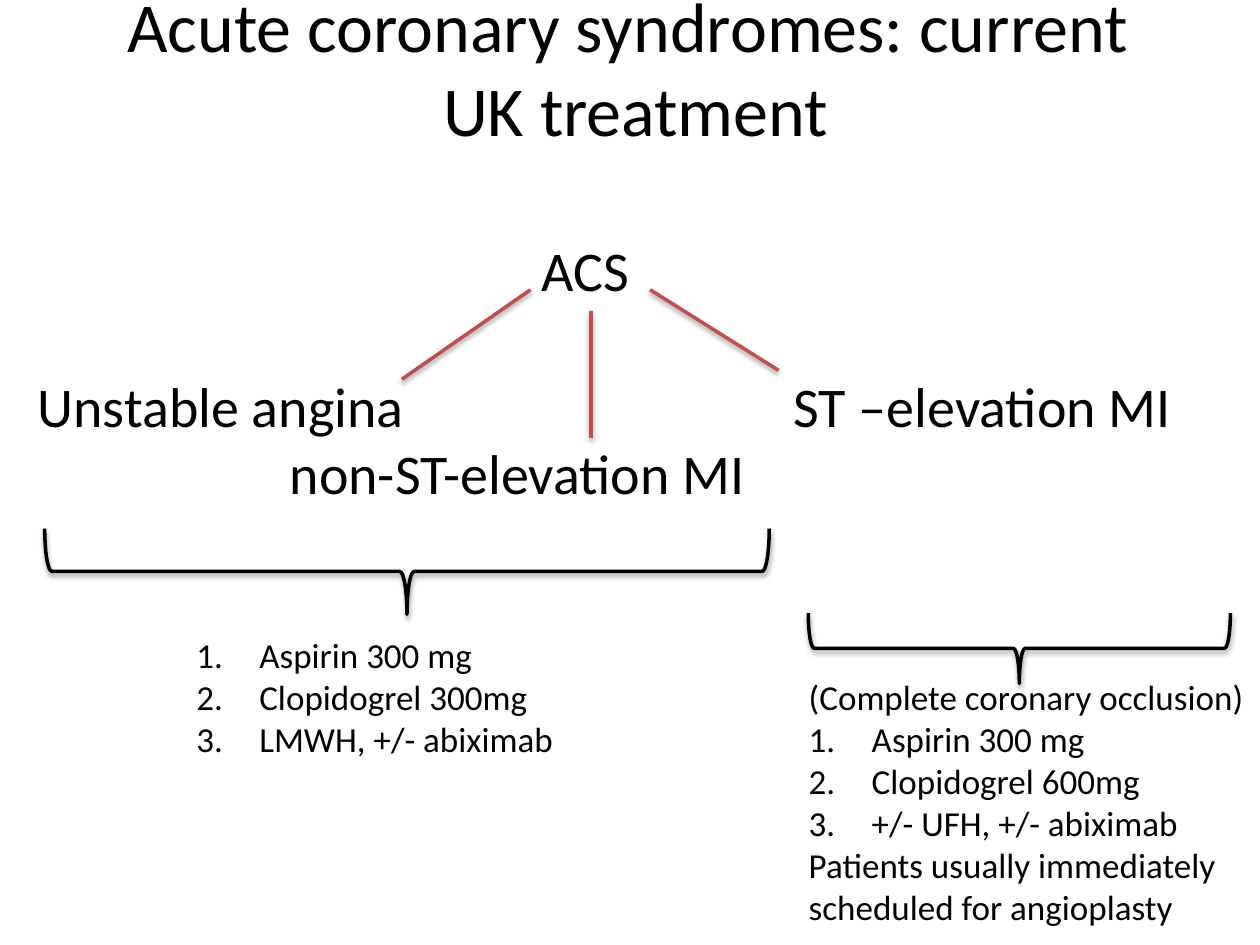
"""Build a slide on the current UK treatment of acute coronary syndromes."""
from lxml.etree import SubElement
from pptx import Presentation
from pptx.dml.color import RGBColor
from pptx.enum.shapes import MSO_CONNECTOR, MSO_SHAPE
from pptx.enum.text import PP_ALIGN
from pptx.oxml.ns import qn
from pptx.util import Inches, Pt

BLACK = RGBColor(0x00, 0x00, 0x00)
RED = RGBColor(0xC0, 0x50, 0x4D)


def write(frame, text, size=20, align=PP_ALIGN.LEFT, before=0, tab=None, hang=0, numbered=False):
    first = not frame.paragraphs[0].runs
    paragraph = frame.paragraphs[0] if first else frame.add_paragraph()
    props = paragraph._p.get_or_add_pPr()
    if hang:
        props.set("marL", str(Inches(hang)))
        props.set("indent", str(-Inches(hang)))
    if numbered:
        SubElement(props, qn("a:buFont"), typeface="+mj-lt")
        SubElement(props, qn("a:buAutoNum"), type="arabicPeriod")
    if tab:
        stops = SubElement(props, qn("a:tabLst"))
        SubElement(stops, qn("a:tab"), pos=str(Inches(tab)), algn="l")
    paragraph.alignment = align
    if before:
        paragraph.space_before = Pt(before)
    run = paragraph.add_run()
    run.text = text
    run.font.name = "Calibri"
    run.font.size = Pt(size)
    run.font.color.rgb = BLACK


class SlideBuilder:
    def __init__(self, slide, line_width=2):
        self.slide = slide
        self.line_width = Pt(line_width)

    def text_box(self, left, top, width, height):
        box = self.slide.shapes.add_textbox(*map(Inches, (left, top, width, height)))
        box.text_frame.word_wrap = True
        return box.text_frame

    def outline(self, shape, color):
        shape.line.color.rgb = color
        shape.line.width = self.line_width
        effects = SubElement(shape._element.spPr, qn("a:effectLst"))
        shadow = SubElement(effects, qn("a:outerShdw"), blurRad=str(Pt(3.1)),
                            dist=str(Pt(1.6)), dir="5400000", rotWithShape="0")
        tint = SubElement(shadow, qn("a:srgbClr"), val=str(BLACK))
        SubElement(tint, qn("a:alpha"), val="38000")

    def brace(self, left, top, width, height):
        brace = self.slide.shapes.add_shape(
            MSO_SHAPE.LEFT_BRACE, *map(Inches, (left, top, width, height)))
        brace.rotation = 270
        brace.fill.background()
        self.outline(brace, BLACK)

    def branch(self, start, end):
        branch = self.slide.shapes.add_connector(
            MSO_CONNECTOR.STRAIGHT, *map(Inches, (*start, *end)))
        self.outline(branch, RED)

    def numbered_list(self, frame, items):
        for item in items:
            write(frame, item, hang=0.5, numbered=True)


def main():
    deck = Presentation()
    deck.slide_width, deck.slide_height = Inches(10), Inches(7.5)
    builder = SlideBuilder(deck.slides.add_slide(deck.slide_layouts[6]))

    overview = builder.text_box(0.2, -0.19, 9.69, 5.35)
    write(overview, "Acute coronary syndromes: current ", size=40, align=PP_ALIGN.CENTER)
    write(overview, "UK treatment", size=40, align=PP_ALIGN.CENTER)
    write(overview, "\tACS", size=32, before=49, tab=4)
    write(overview, "Unstable angina\tST –elevation MI", size=32, before=39, tab=6)
    write(overview, "\tnon-ST-elevation MI", size=32, tab=2)

    builder.brace(2.89, 1.66, 0.68, 5.75)
    builder.brace(7.81, 3.47, 0.56, 3.35)

    for start, end in (((4.21, 2.3), (3.19, 3.01)),
                       ((5.16, 2.3), (6.18, 2.94)),
                       ((4.69, 2.47), (4.69, 3.48))):
        builder.branch(start, end)

    st_elevation = builder.text_box(6.32, 5.31, 3.68, 2.46)
    write(st_elevation, "(Complete coronary occlusion)")
    builder.numbered_list(
        st_elevation, ("Aspirin 300 mg", "Clopidogrel 600mg", "+/- UFH, +/- abiximab"))
    for line in ("Patients usually immediately", "scheduled for angioplasty"):
        write(st_elevation, line, hang=0.5)

    non_st_elevation = builder.text_box(1.46, 4.98, 3.06, 1.11)
    builder.numbered_list(
        non_st_elevation, ("Aspirin 300 mg", "Clopidogrel 300mg", "LMWH, +/- abiximab"))

    deck.save("out.pptx")


if __name__ == "__main__":
    main()
